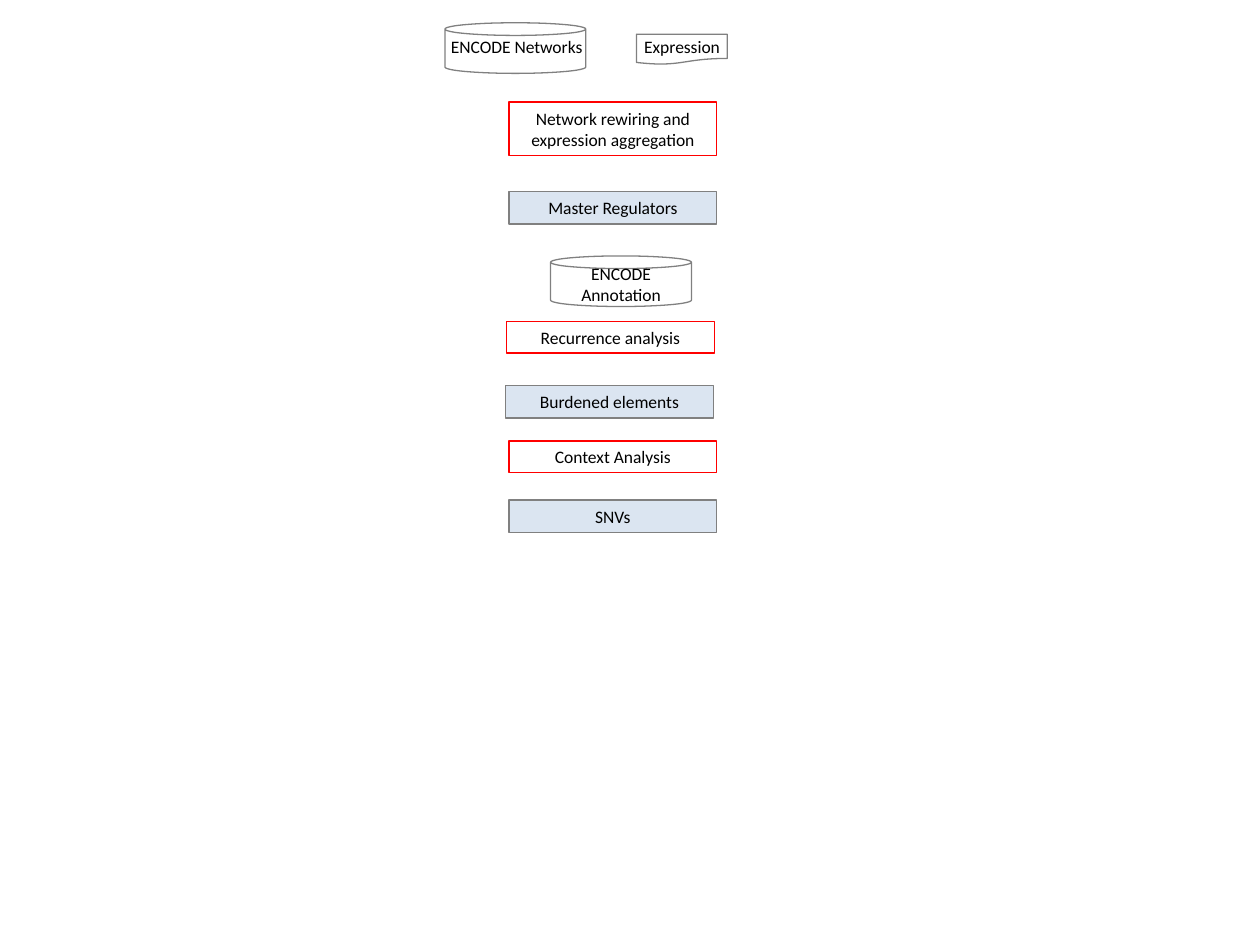
from lxml import etree
from pptx import Presentation
from pptx.dml.color import RGBColor
from pptx.enum.shapes import MSO_SHAPE
from pptx.enum.text import MSO_ANCHOR, MSO_AUTO_SIZE, PP_ALIGN
from pptx.oxml.ns import qn
from pptx.util import Cm, Pt

CAN = MSO_SHAPE.CAN
DOCUMENT = MSO_SHAPE.FLOWCHART_DOCUMENT
RECTANGLE = MSO_SHAPE.RECTANGLE
CENTER = PP_ALIGN.CENTER
LEFT = PP_ALIGN.LEFT
MIDDLE = MSO_ANCHOR.MIDDLE
FIT_SHAPE = MSO_AUTO_SIZE.SHAPE_TO_FIT_TEXT

COLORS = {"text": "000000", "gray": "808080", "red": "FF0000", "blue": "B9CDE5"}
STEP_WIDTH = 4.19
CAN_WIDTH, CAN_HEIGHT = 2.84, 1.02


def write(box, text, align=CENTER):
    box.text_frame.text = text
    para = box.text_frame.paragraphs[0]
    para.alignment = align
    for span in para.runs:
        span.font.size = Pt(10)
        span.font.name = "Calibri"
        span.font.color.rgb = RGBColor.from_string(COLORS["text"])


def add_outline(parent, kind, left, top, width, height, line="gray"):
    """Add an unfilled shape with a thin line."""
    shape = parent.add_shape(kind, Cm(left), Cm(top), Cm(width), Cm(height))
    shape.shadow.inherit = False
    shape.fill.background()
    shape.line.color.rgb = RGBColor.from_string(COLORS[line])
    shape.line.width = Pt(0.75)
    return shape


deck = Presentation()
deck.slide_width, deck.slide_height = Cm(25.4), Cm(19.05)
page = deck.slides.add_slide(deck.slide_layouts[6])

# Input data
add_outline(page.shapes, CAN, 8.97, 0.46, CAN_WIDTH, CAN_HEIGHT)
networks = page.shapes.add_textbox(Cm(8.84), Cm(0.61), Cm(3.2), Cm(0.69))
write(networks, "ENCODE Networks", LEFT)
networks.text_frame.word_wrap = False
networks.text_frame.auto_size = FIT_SHAPE

expression = page.shapes.add_group_shape()
add_outline(expression.shapes, DOCUMENT, 12.83, 0.69, 1.83, 0.61)
label = expression.shapes.add_textbox(Cm(12.67), Cm(0.61), Cm(2.16), Cm(0.69))
write(label, "Expression")
label.text_frame.word_wrap = True
label.text_frame.auto_size = FIT_SHAPE

# Analyses have a red line, their results a half-transparent blue fill
steps = [
    ("Network rewiring and expression aggregation", "analysis", 10.26, 2.06, 1.07),
    ("Master Regulators", "result", 10.26, 3.86, 0.66),
    ("ENCODE Annotation", "source", 11.1, 5.16, CAN_HEIGHT),
    ("Recurrence analysis", "analysis", 10.21, 6.48, 0.64),
    ("Burdened elements", "result", 10.19, 7.77, 0.66),
    ("Context Analysis", "analysis", 10.26, 8.89, 0.64),
    ("SNVs", "result", 10.26, 10.08, 0.66),
]
for text, role, left, top, height in steps:
    kind, width = (CAN, CAN_WIDTH) if role == "source" else (RECTANGLE, STEP_WIDTH)
    line = "red" if role == "analysis" else "gray"
    step = add_outline(page.shapes, kind, left, top, width, height, line)
    if role == "result":
        step.fill.solid()
        step.fill.fore_color.rgb = RGBColor.from_string(COLORS["blue"])
        color = step.element.spPr.find(qn("a:solidFill")).find(qn("a:srgbClr"))
        etree.SubElement(color, qn("a:alpha")).set("val", "50000")
    write(step, text)
    step.text_frame.word_wrap = True
    step.text_frame.vertical_anchor = MIDDLE

deck.save("out.pptx")
